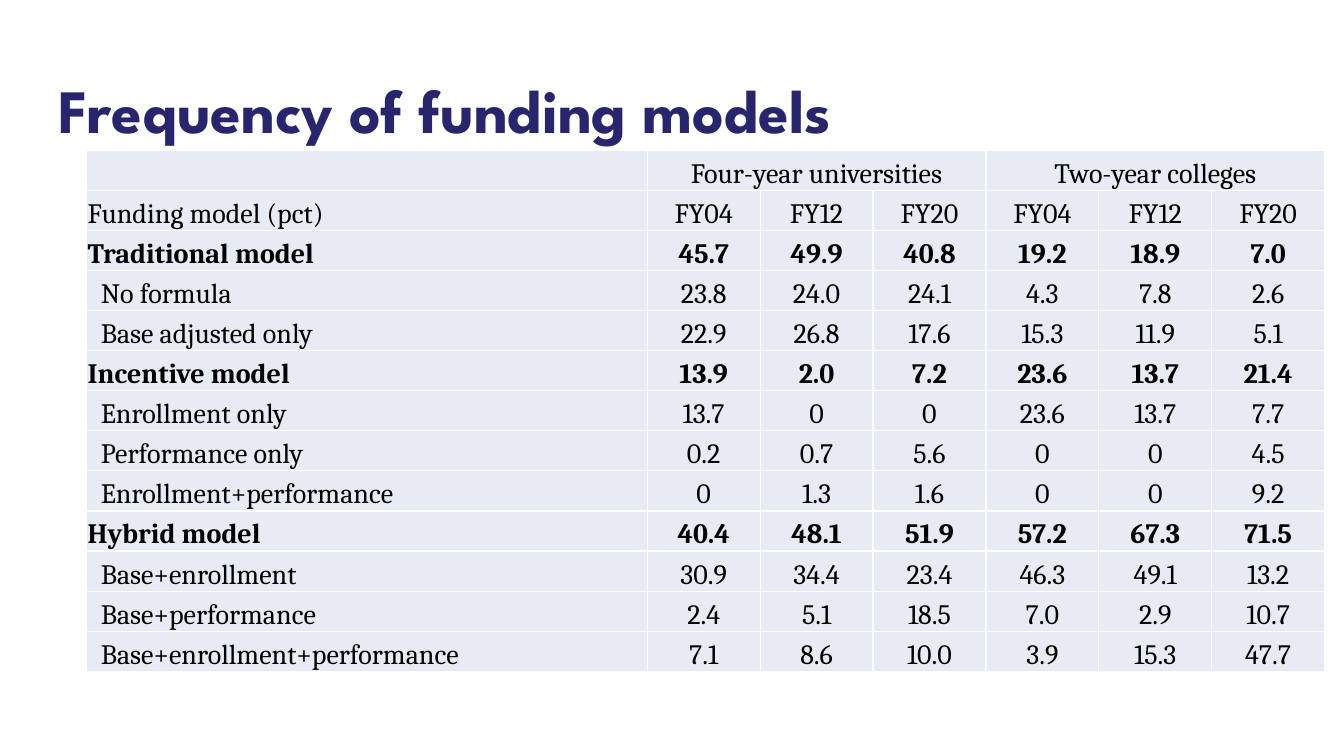
from lxml import etree
from pptx import Presentation
from pptx.dml.color import RGBColor
from pptx.enum import text
from pptx.oxml import ns
from pptx.util import Inches, Pt

# Content
TITLE = "Frequency of funding models"
SECTORS = ["Four-year universities", "Two-year colleges"]
YEARS = ["FY04", "FY12", "FY20"]
MODELS = [  # (name, is a group total, percentages)
    ("Traditional model", True, "45.7 49.9 40.8 19.2 18.9 7.0"),
    ("No formula", False, "23.8 24.0 24.1 4.3 7.8 2.6"),
    ("Base adjusted only", False, "22.9 26.8 17.6 15.3 11.9 5.1"),
    ("Incentive model", True, "13.9 2.0 7.2 23.6 13.7 21.4"),
    ("Enrollment only", False, "13.7 0 0 23.6 13.7 7.7"),
    ("Performance only", False, "0.2 0.7 5.6 0 0 4.5"),
    ("Enrollment+performance", False, "0 1.3 1.6 0 0 9.2"),
    ("Hybrid model", True, "40.4 48.1 51.9 57.2 67.3 71.5"),
    ("Base+enrollment", False, "30.9 34.4 23.4 46.3 49.1 13.2"),
    ("Base+performance", False, "2.4 5.1 18.5 7.0 2.9 10.7"),
    ("Base+enrollment+performance", False, "7.1 8.6 10.0 3.9 15.3 47.7"),
]
NAVY, BLACK, WHITE, PALE = "28256D", "000000", "FFFFFF", "E7EBF3"
NAME_WIDTH, YEAR_WIDTH, TABLE_HEIGHT = 5.56, 1.12, 5.17
MARGIN, INDENT = 0.01, 0.14


def color(value):
    return RGBColor.from_string(value)


def add_text(paragraph, words, font, size, shade, bold):
    run = paragraph.add_run()
    run.text = words
    run.font.name, run.font.size, run.font.bold = font, Pt(size), bold
    run.font.color.rgb = color(shade)


def add_borders(cell):
    properties = cell._tc.get_or_add_tcPr()
    for side in ("lnL", "lnR", "lnT", "lnB"):
        line = etree.SubElement(properties, ns.qn("a:" + side), w=str(Pt(1)))
        fill = etree.SubElement(line, ns.qn("a:solidFill"))
        etree.SubElement(fill, ns.qn("a:srgbClr"), val=WHITE)


def write(cell, words, bold=False, centered=True):
    paragraph = cell.text_frame.paragraphs[0]
    paragraph.alignment = text.PP_ALIGN.CENTER if centered else text.PP_ALIGN.LEFT
    add_text(paragraph, words, "Cambria", 20, BLACK, bold)


prs = Presentation()
prs.slide_width, prs.slide_height = Inches(13.33), Inches(7.5)
slide = prs.slides.add_slide(prs.slide_layouts[5])

# Title
title = slide.shapes.title
title.left, title.top = Inches(0.48), Inches(0.4)
title.width, title.height = Inches(10.41), Inches(1.45)
title.text_frame.vertical_anchor = text.MSO_ANCHOR.MIDDLE
heading = title.text_frame.paragraphs[0]
heading.alignment = text.PP_ALIGN.LEFT
heading.line_spacing = 0.9
add_text(heading, TITLE, "League Spartan", 44, NAVY, True)

# Table grid
row_count = len(MODELS) + 2
year_count = len(SECTORS) * len(YEARS)
table = slide.shapes.add_table(
    row_count, year_count + 1, Inches(0.86), Inches(1.49),
    Inches(NAME_WIDTH + year_count * YEAR_WIDTH), Inches(TABLE_HEIGHT)).table
table.first_row = table.horz_banding = False
for i, column in enumerate(table.columns):
    column.width = Inches(YEAR_WIDTH if i else NAME_WIDTH)
for row in table.rows:
    row.height = Inches(TABLE_HEIGHT / row_count)
for cell in table.iter_cells():
    add_borders(cell)
    cell.fill.solid()
    cell.fill.fore_color.rgb = color(PALE)
    cell.margin_left = cell.margin_right = cell.margin_top = Inches(MARGIN)
    cell.margin_bottom = 0
    cell.vertical_anchor = text.MSO_ANCHOR.BOTTOM

# Header rows
for i, sector in enumerate(SECTORS):
    first = 1 + i * len(YEARS)
    table.cell(0, first).merge(table.cell(0, first + len(YEARS) - 1))
    write(table.cell(0, first), sector)
write(table.cell(1, 0), "Funding model (pct)", centered=False)
for c, year in enumerate(YEARS * len(SECTORS), 1):
    write(table.cell(1, c), year)

# Model rows
for r, (model, is_total, shares) in enumerate(MODELS, 2):
    write(table.cell(r, 0), model, is_total, centered=False)
    if not is_total:
        table.cell(r, 0).margin_left = Inches(INDENT)
    for c, share in enumerate(shares.split(), 1):
        write(table.cell(r, c), share, is_total)

prs.save("out.pptx")
